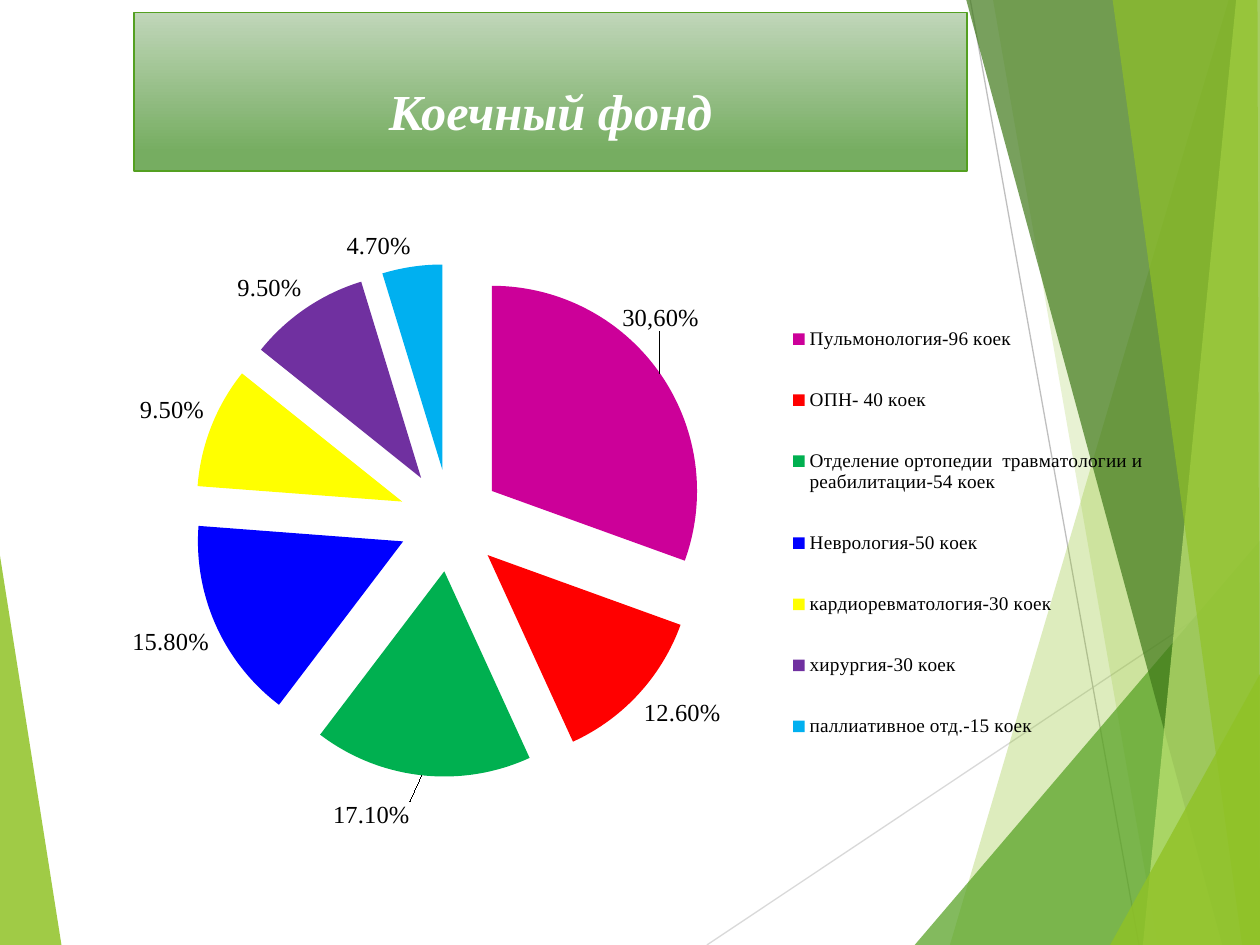
from dataclasses import dataclass

from lxml import etree
from pptx import Presentation
from pptx import util as u
from pptx.chart.data import CategoryChartData
from pptx.dml.color import RGBColor
from pptx.enum import chart as ch
from pptx.enum import shapes, text
from pptx.oxml import ns

WIDTH, HEIGHT = 25.4, 19.05
SERIF = "Times New Roman"
WHITE = RGBColor(0xFF, 0xFF, 0xFF)
BLACK = RGBColor(0x00, 0x00, 0x00)
LIME = RGBColor(0x90, 0xC2, 0x26)
GREEN = RGBColor(0x54, 0xA0, 0x21)
FOREST = RGBColor(0x3F, 0x78, 0x19)
PALE_LIME = RGBColor(0xC0, 0xE4, 0x74)
TITLE_TOP = RGBColor(0xC0, 0xD6, 0xB9)
TITLE_BOTTOM = RGBColor(0x76, 0xAD, 0x61)
LIGHT_GRAY = RGBColor(0xD9, 0xD9, 0xD9)
GRAY = RGBColor(0xBF, 0xBF, 0xBF)


@dataclass
class Facet:
    points: list[tuple[float, float]]
    color: RGBColor
    opacity: int


@dataclass
class Ray:
    start: tuple[float, float]
    end: tuple[float, float]
    color: RGBColor


@dataclass
class Ward:
    name: str
    share: float
    color: RGBColor


def band(top: float, bottom: float, color: RGBColor, opacity: int) -> Facet:
    points = [(top, 0), (bottom, HEIGHT), (WIDTH, HEIGHT), (WIDTH, 0)]
    return Facet(points, color, opacity)


def corner(left: float, top: float, color: RGBColor, opacity: int) -> Facet:
    return Facet([(left, HEIGHT), (WIDTH, top), (WIDTH, HEIGHT)], color, opacity)


RAYS = [
    Ray((14.25, HEIGHT), (WIDTH, 11.61), LIGHT_GRAY),
    Ray((19.56, 0), (22.96, HEIGHT), GRAY),
]
LEFT_FACET = Facet([(0, 11.2), (1.24, HEIGHT), (0, HEIGHT)], LIME, 85)
RIGHT_FACETS = [
    band(24.77, 19.15, LIME, 30),
    band(20.02, 23.34, LIME, 20),
    corner(18.44, 10.9, GREEN, 72),
    band(19.48, 24.64, FOREST, 70),
    band(24.92, 23.04, PALE_LIME, 70),
    Facet([(22.43, 0), (25.04, HEIGHT), (WIDTH, HEIGHT), (25.35, 0)], LIME, 65),
    corner(22.38, 13.59, LIME, 80),
]
WARDS = [
    Ward("Пульмонология-96 коек", 0.304, RGBColor(0xCC, 0x00, 0x99)),
    Ward("ОПН- 40 коек", 0.126, RGBColor(0xFF, 0x00, 0x00)),
    Ward("Отделение ортопедии  травматологии и реабилитации-54 коек",
         0.171, RGBColor(0x00, 0xB0, 0x50)),
    Ward("Неврология-50 коек", 0.158, RGBColor(0x00, 0x00, 0xFF)),
    Ward("кардиоревматология-30 коек", 0.095, RGBColor(0xFF, 0xFF, 0x00)),
    Ward("хирургия-30 коек", 0.095, RGBColor(0x70, 0x30, 0xA0)),
    Ward("паллиативное отд.-15 коек", 0.047, RGBColor(0x00, 0xB0, 0xF0)),
]


def set_format(target, values: dict) -> None:
    for name, value in values.items():
        setattr(target, name, value)


def set_font(font, color: RGBColor, values: dict) -> None:
    set_format(font, values)
    font.color.rgb = color


def draw_facet(page, facet: Facet) -> None:
    points = [(x * 100, y * 100) for x, y in facet.points]
    builder = page.shapes.build_freeform(*points[0], scale=float(u.Cm(0.01)))
    builder.add_line_segments(points[1:], close=True)
    shape = builder.convert_to_shape()
    shape.shadow.inherit = False
    shape.fill.solid()
    shape.fill.fore_color.rgb = facet.color
    shape.line.fill.background()
    color = next(shape.element.spPr.iter(ns.qn("a:srgbClr")))
    etree.SubElement(color, ns.qn("a:alpha"), val=str(facet.opacity * 1000))


def draw_ray(page, ray: Ray) -> None:
    ends = [u.Cm(value) for value in ray.start + ray.end]
    line = page.shapes.add_connector(shapes.MSO_CONNECTOR.STRAIGHT, *ends)
    line.line.color.rgb = ray.color
    line.line.width = u.Pt(0.75)
    etree.SubElement(line.element.spPr, ns.qn("a:effectLst"))


def draw_title(page) -> None:
    box = page.shapes.title
    box.element.getparent().append(box.element)
    set_format(box, {"left": u.Cm(2.7), "top": u.Cm(0.25),
                     "width": u.Cm(16.8), "height": u.Cm(3.2)})
    box.fill.gradient()
    box.fill.gradient_angle = 270
    stops = [(0, TITLE_TOP), (0.88, TITLE_BOTTOM)]
    for stop, (position, color) in zip(box.fill.gradient_stops, stops):
        stop.position = position
        stop.color.rgb = color
    box.line.color.rgb = GREEN
    box.line.width = u.Pt(1)
    frame = box.text_frame
    set_format(frame, {"word_wrap": True, "auto_size": text.MSO_AUTO_SIZE.NONE,
                       "vertical_anchor": text.MSO_ANCHOR.BOTTOM,
                       "margin_bottom": u.Cm(0.62)})
    para = frame.paragraphs[0]
    para.alignment = text.PP_ALIGN.CENTER
    span = para.add_run()
    span.text = "Коечный фонд"
    set_font(span.font, WHITE, {"name": SERIF, "size": u.Pt(28.8),
                                "bold": True, "italic": True})


def set_layout(parent, index: int, values: dict) -> None:
    for old in parent.findall(ns.qn("c:layout")):
        parent.remove(old)
    layout = etree.Element(ns.qn("c:layout"))
    manual = etree.SubElement(layout, ns.qn("c:manualLayout"))
    for name, value in values.items():
        etree.SubElement(manual, ns.qn(f"c:{name}"), val=str(value))
    parent.insert(index, layout)


def draw_chart(page) -> None:
    data = CategoryChartData(number_format="0.00%")
    data.categories = [ward.name for ward in WARDS]
    data.add_series("Series 1", [ward.share for ward in WARDS])
    chart = page.shapes.add_chart(
        ch.XL_CHART_TYPE.PIE, u.Cm(1.7), u.Cm(4.32), u.Cm(22), u.Cm(12.47), data
    ).chart
    chart.has_title = False
    set_font(chart.font, BLACK, {"name": "Cabin", "size": u.Pt(18)})
    chart.has_legend = True
    legend = chart.legend
    set_format(legend, {"position": ch.XL_LEGEND_POSITION.RIGHT,
                        "include_in_layout": False})
    set_font(legend.font, BLACK, {"name": SERIF, "size": u.Pt(11)})

    plot = chart.plots[0]
    plot.vary_by_categories = True
    series = plot.series[0]
    for point, ward in zip(series.points, WARDS):
        point.format.fill.solid()
        point.format.fill.fore_color.rgb = ward.color
    first_point = series._element.find(ns.qn("c:dPt"))
    explosion = etree.Element(ns.qn("c:explosion"), val="25")
    first_point.addprevious(explosion)

    label_format = {"name": SERIF, "size": u.Pt(14)}
    labels = series.data_labels
    set_format(labels, {"show_value": True, "number_format": "0.00%",
                        "number_format_is_linked": False,
                        "position": ch.XL_LABEL_POSITION.OUTSIDE_END})
    set_font(labels.font, BLACK, label_format)
    first_label = series.points[0].data_label
    span = first_label.text_frame.paragraphs[0].add_run()
    span.text = "30,60%"
    set_font(span.font, BLACK, label_format)
    third_label = series.points[2].data_label
    set_font(third_label.font, BLACK, label_format)
    for label in (first_label, third_label):
        label.position = ch.XL_LABEL_POSITION.OUTSIDE_END

    offsets = [{"x": -0.04, "y": -0.06}, {"x": -0.01, "y": 0.03}]
    for label, offset in zip(series._element.iter(ns.qn("c:dLbl")), offsets):
        set_layout(label, 1, offset)
    edges = {"xMode": "edge", "yMode": "edge"}
    plot_area = next(chart._chartSpace.iter(ns.qn("c:plotArea")))
    set_layout(plot_area, 0, {"layoutTarget": "inner", **edges,
                              "x": 0.1, "y": 0.08, "w": 0.47, "h": 0.83})
    set_layout(legend._element, 1, {**edges, "x": 0.63, "y": 0.12,
                                    "w": 0.36, "h": 0.79})


def main() -> None:
    deck = Presentation()
    deck.slide_width, deck.slide_height = u.Cm(WIDTH), u.Cm(HEIGHT)
    page = deck.slides.add_slide(deck.slide_layouts[5])
    draw_facet(page, LEFT_FACET)
    for ray in RAYS:
        draw_ray(page, ray)
    for facet in RIGHT_FACETS:
        draw_facet(page, facet)
    draw_title(page)
    draw_chart(page)
    deck.save("out.pptx")


if __name__ == "__main__":
    main()
